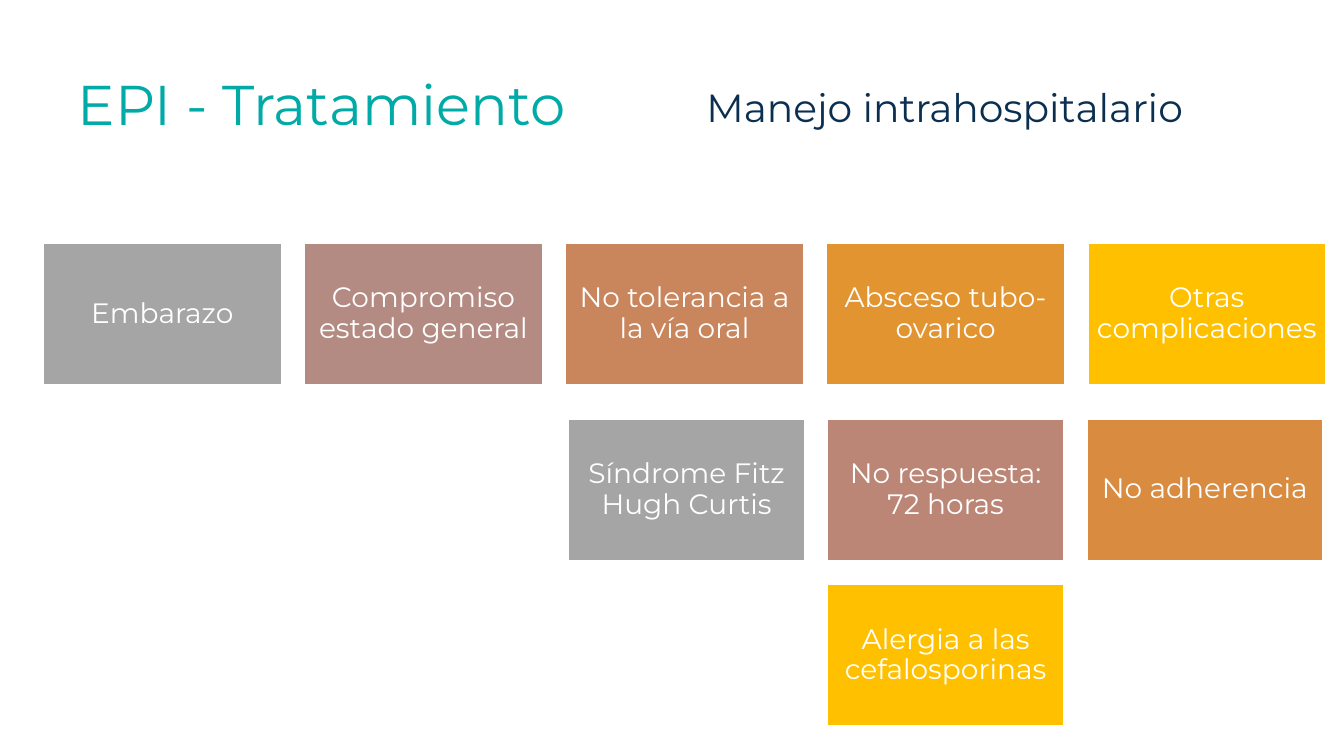
from pptx import Presentation
from pptx.dml.color import RGBColor
from pptx.enum.shapes import MSO_SHAPE
from pptx.enum.text import MSO_ANCHOR as ANCHOR, PP_ALIGN as ALIGN
from pptx.util import Inches, Pt

WHITE = RGBColor(0xFF, 0xFF, 0xFF)
TEAL = RGBColor(0x00, 0xAA, 0xA7)
NAVY = RGBColor(0x0B, 0x2F, 0x51)
GRAY = RGBColor(0xA5, 0xA5, 0xA5)
MAUVE = RGBColor(0xB4, 0x8B, 0x83)
ROSE = RGBColor(0xBB, 0x86, 0x76)
COPPER = RGBColor(0xC9, 0x85, 0x5C)
OCHRE = RGBColor(0xD9, 0x8B, 0x3F)
ORANGE = RGBColor(0xE1, 0x94, 0x2F)
GOLD = RGBColor(0xFF, 0xC0, 0x00)


class Deck:
    font = "Montserrat"

    def __init__(self):
        self.prs = Presentation()
        self.prs.slide_width = Inches(13.33)
        self.prs.slide_height = Inches(7.5)
        self.s = self.prs.slides.add_slide(self.prs.slide_layouts[6])

    def fill_text(self, tf, text, size, color, align, anchor, spacing):
        tf.word_wrap = True
        tf.vertical_anchor = anchor
        p = tf.paragraphs[0]
        p.alignment = align
        p.line_spacing = spacing
        r = p.add_run()
        r.text = text
        r.font.name = self.font
        r.font.size = Pt(size)
        r.font.color.rgb = color

    def text(self, x, y, w, h, text, size, color, align, anchor=ANCHOR.TOP, spacing=1.0):
        sp = self.s.shapes.add_textbox(Inches(x), Inches(y), Inches(w), Inches(h))
        self.fill_text(sp.text_frame, text, size, color, align, anchor, spacing)

    def card(self, x, y, w, h, text, fill):
        sp = self.s.shapes.add_shape(
            MSO_SHAPE.RECTANGLE, Inches(x), Inches(y), Inches(w), Inches(h))
        sp.shadow.inherit = False
        sp.fill.solid()
        sp.fill.fore_color.rgb = fill
        sp.line.color.rgb = WHITE
        sp.line.width = Pt(1)
        tf = sp.text_frame
        tf.margin_left = tf.margin_right = Inches(0.08)
        tf.margin_top = tf.margin_bottom = Inches(0.08)
        self.fill_text(tf, text, 20, WHITE, ALIGN.CENTER, ANCHOR.MIDDLE, 0.9)

    def row(self, x, y, w, h, pitch, cards):
        for i, (text, fill) in enumerate(cards):
            self.card(x + i * pitch, y, w, h, text, fill)


def main():
    deck = Deck()
    deck.row(0.43, 2.41, 2.36, 1.41, 2.59, [
        ("Embarazo", GRAY),
        ("Compromiso estado general", MAUVE),
        ("No tolerancia a la vía oral", COPPER),
        ("Absceso tubo-ovarico", ORANGE),
        ("Otras complicaciones", GOLD),
    ])
    deck.row(5.64, 4.16, 2.34, 1.4, 2.57, [
        ("Síndrome Fitz Hugh Curtis", GRAY),
        ("No respuesta: 72 horas", ROSE),
        ("No adherencia", OCHRE),
    ])
    deck.card(8.21, 5.8, 2.34, 1.4, "Alergia a las cefalosporinas", GOLD)
    deck.text(6.16, 0.78, 5.67, 0.57, "Manejo intrahospitalario", 28, NAVY, ALIGN.RIGHT)
    deck.text(0.42, 0.05, 5.54, 2.02, "EPI - Tratamiento", 40, TEAL,
              ALIGN.CENTER, ANCHOR.MIDDLE, 0.9)
    deck.prs.save("out.pptx")


if __name__ == "__main__":
    main()
